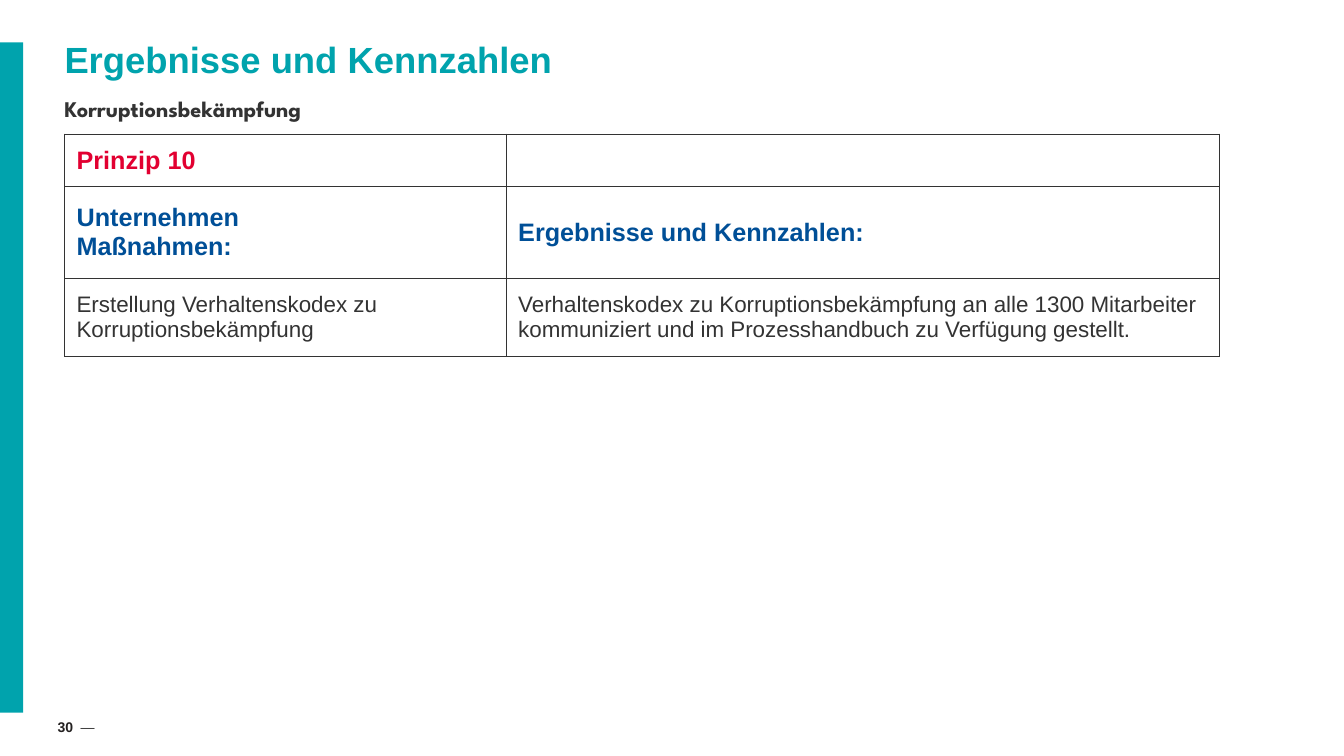
import pptx
import pptx.util
import pptx.dml.color
import pptx.enum.shapes
import pptx.enum.text
import lxml.etree
from pptx.util import Inches, Pt

# Content
COLORS = {"teal": "00A3AD", "red": "E20031", "blue": "004F97",
          "dark": "333333", "black": "232020"}
STYLES = {
    "title": {"name": "Arial", "size": Pt(26), "bold": True, "color": "teal"},
    "subtitle": {"name": "League Spartan", "size": Pt(16), "bold": True, "color": "dark"},
    "number": {"name": "Arial", "size": Pt(10), "bold": True, "color": "black"},
    "dash": {"name": "Arial", "size": Pt(10), "bold": False, "color": "dark"},
    "principle": {"name": "Arial", "size": Pt(18), "bold": True, "color": "red"},
    "heading": {"name": "Arial", "size": Pt(18), "bold": True, "color": "blue"},
    "body": {"name": "Arial", "size": Pt(16), "bold": False, "color": "dark"},
}
# Position (left, top, width, height), insets (left, top, right, bottom), alignment, runs
TEXT_BOXES = [
    ((0.64, 0.34, 12.07, 0.56), (0, 0.03, 0, 0), "LEFT",
     [("Ergebnisse und Kennzahlen", "title")]),
    ((0.64, 0.87, 12.08, 0.46), (0, 0.07, 0, 0), "LEFT",
     [("Korruptionsbekämpfung", "subtitle")]),
    ((0.43, 7.08, 0.61, 0.26), (0.08, 0.05, 0.04, 0.05), "CENTER",
     [("30 ", "number"), (" —", "dash")]),
]
BAR = (0, 0.42, 0.23, 6.65)
TABLE_LEFT, TABLE_TOP = 0.64, 1.33
COLUMN_WIDTHS = [4.38, 7.07]
# Row height, style, cell texts
TABLE_ROWS = [
    (0.52, "principle", ["Prinzip 10", ""]),
    (0.91, "heading", ["Unternehmen \vMaßnahmen:", "Ergebnisse und Kennzahlen:"]),
    (0.78, "body", [
        "Erstellung Verhaltenskodex zu Korruptionsbekämpfung",
        "Verhaltenskodex zu Korruptionsbekämpfung an alle 1300 Mitarbeiter "
        "kommuniziert und im Prozesshandbuch zu Verfügung gestellt."]),
]
CELL_INSETS = (0.12, 0.05, 0.12, 0.05)
BORDER_WIDTH = Pt(0.5)


def rgb(color):
    return pptx.dml.color.RGBColor.from_string(COLORS[color])


def format_font(font, style):
    for attribute, value in STYLES[style].items():
        if attribute == "color":
            font.color.rgb = rgb(value)
        else:
            setattr(font, attribute, value)


def set_insets(target, insets):
    for side, inset in zip(("left", "top", "right", "bottom"), insets):
        setattr(target, f"margin_{side}", Inches(inset))


def add_borders(cell):
    properties = cell._tc.get_or_add_tcPr()
    namespace = "{%s}" % properties.nsmap["a"]
    for index, side in enumerate(("lnL", "lnR", "lnT", "lnB")):
        line = lxml.etree.Element(namespace + side, w=str(int(BORDER_WIDTH)))
        fill = lxml.etree.SubElement(line, namespace + "solidFill")
        lxml.etree.SubElement(fill, namespace + "srgbClr", val=COLORS["dark"])
        properties.insert(index, line)


presentation = pptx.Presentation()
presentation.slide_width = Inches(13.33)
presentation.slide_height = Inches(7.5)
slide = presentation.slides.add_slide(presentation.slide_layouts[6])

# Side bar
bar = slide.shapes.add_shape(pptx.enum.shapes.MSO_SHAPE.RECTANGLE, *map(Inches, BAR))
bar.shadow.inherit = False
bar.fill.solid()
bar.fill.fore_color.rgb = rgb("teal")
bar.line.fill.background()

# Title, subtitle and page number
for position, insets, alignment, runs in TEXT_BOXES:
    frame = slide.shapes.add_textbox(*map(Inches, position)).text_frame
    frame.word_wrap = True
    set_insets(frame, insets)
    paragraph = frame.paragraphs[0]
    paragraph.alignment = pptx.enum.text.PP_ALIGN[alignment]
    for text, style in runs:
        run = paragraph.add_run()
        run.text = text
        format_font(run.font, style)

# Table of measures and results
table = slide.shapes.add_table(
    len(TABLE_ROWS), len(COLUMN_WIDTHS), Inches(TABLE_LEFT), Inches(TABLE_TOP),
    Inches(sum(COLUMN_WIDTHS)), Inches(sum(row[0] for row in TABLE_ROWS))).table
table.first_row = table.horz_banding = False
for column, width in zip(table.columns, COLUMN_WIDTHS):
    column.width = Inches(width)
for row, (height, style, texts) in zip(table.rows, TABLE_ROWS):
    row.height = Inches(height)
    for cell, text in zip(row.cells, texts):
        cell.fill.background()
        cell.vertical_anchor = pptx.enum.text.MSO_ANCHOR.MIDDLE
        set_insets(cell, CELL_INSETS)
        add_borders(cell)
        paragraph = cell.text_frame.paragraphs[0]
        paragraph.text = text
        format_font(paragraph.font, style)
        for run in paragraph.runs:
            format_font(run.font, style)

presentation.save("out.pptx")
